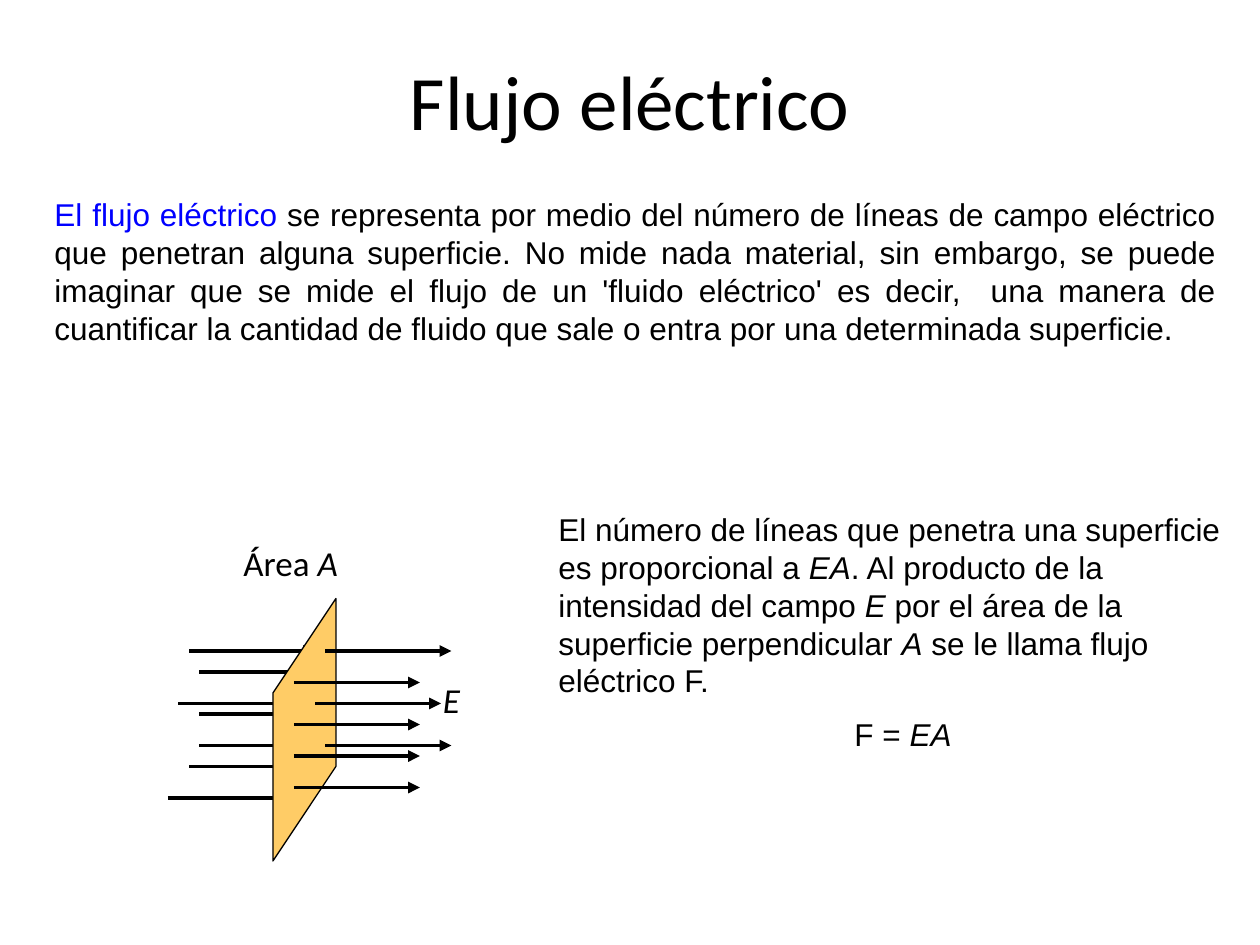
from pptx import Presentation
from pptx.dml.color import RGBColor
from pptx.enum.shapes import MSO_CONNECTOR as Link
from pptx.enum.text import MSO_ANCHOR as Anchor, PP_ALIGN as Align
from pptx.oxml.ns import qn
from pptx.util import Inches, Pt
from lxml.etree import SubElement

COLS, ROWS = 120, 90
SPAN = 12
BACK = [(2, 5), (3, 7), (1, 10), (3, 14), (0, 19), (3, 11), (2, 16)]
FRONT = [(12, 8), (15, 5), (14, 10), (12, 15), (12, 12), (15, 14), (12, 18)]
PLATE = [(10, 25), (10, 9), (16, 0), (16, 16)]


def unit(n):
    """Turn grid columns or rows into a length."""
    return Inches(n / 12)


def tint(hue):
    """Turn a hex string into a colour."""
    return RGBColor.from_string(hue)


def style(item, look):
    """Set each attribute of item named in look."""
    for name, value in look.items():
        setattr(item, name, value)


def place(shape, box):
    """Move a shape to a grid box."""
    names = ("left", "top", "width", "height")
    style(shape, dict(zip(names, map(unit, box))))


def write(par, runs, size, face, align):
    """Fill a paragraph with (text, italic, colour) runs."""
    style(par, {"alignment": align, "space_before": Pt(size / 2)})
    for text, slant, hue in runs:
        run = par.add_run()
        run.text = text
        style(run.font, {"size": Pt(size), "name": face, "italic": slant})
        run.font.color.rgb = tint(hue)


def note(slide, box, pars, size=18, face="Arial"):
    """Add a wrapped text box of (align, runs) paragraphs."""
    frame = slide.shapes.add_textbox(*map(unit, box)).text_frame
    frame.word_wrap = True
    for i, (align, runs) in enumerate(pars):
        par = frame.add_paragraph() if i else frame.paragraphs[0]
        write(par, runs, size, face, align)


def plain(text, hue="000000"):
    """Describe an upright run."""
    return text, False, hue


def slant(text):
    """Describe an italic run."""
    return text, True, "000000"


def head(slide, box):
    """Place and fill the title."""
    title = slide.shapes.title
    place(title, box)
    title.text_frame.vertical_anchor = Anchor.MIDDLE
    par = title.text_frame.paragraphs[0]
    write(par, [plain("Flujo eléctrico")], 44, "Calibri", Align.CENTER)
    par.space_before = Pt(0)


def arrow(group, x, y):
    """Draw one field line pointing right."""
    ends = map(unit, (x, y, x + SPAN, y))
    link = group.shapes.add_connector(Link.STRAIGHT, *ends)
    link.line.width = Pt(2.25)
    link.line.color.rgb = tint("000000")
    SubElement(link.line._get_or_add_ln(), qn("a:tailEnd"), type="triangle")
    SubElement(link._element.spPr, qn("a:effectLst"))


def plate(group, x, y):
    """Draw the slanted surface."""
    start, *rest = [(unit(x + a), unit(y + b)) for a, b in PLATE]
    pen = group.shapes.build_freeform(*start)
    pen.add_line_segments(rest, close=True)
    shape = pen.convert_to_shape()
    shape.shadow.inherit = False
    shape.fill.solid()
    shape.fill.fore_color.rgb = tint("FFCC66")
    shape.line.color.rgb = tint("000000")
    shape.line.width = Pt(0.75)


def field(slide, x, y):
    """Draw the surface with field lines behind and before it."""
    group = slide.shapes.add_group_shape()
    for a, b in BACK:
        arrow(group, x + a, y + b)
    plate(group, x, y)
    for a, b in FRONT:
        arrow(group, x + a, y + b)


def labels(slide, x, y):
    """Name the area and the field."""
    area = [(Align.LEFT, [plain("Área "), slant("A")])]
    note(slide, (x + 6, y - 6, 24, 5.2), area, 20, "Calibri")
    note(slide, (x + 25, y + 7, 6, 5.2), [(Align.LEFT, [slant("E")])], 20, "Calibri")


def intro(slide, box):
    """Write the definition."""
    runs = [
        plain("El flujo eléctrico", "0000FF"),
        plain(" se representa por medio del número de líneas de campo eléctrico "
              "que penetran alguna superficie. No mide nada material, sin embargo, "
              "se puede imaginar que se mide el flujo de un 'fluido eléctrico' es "
              "decir,  una manera de cuantificar la cantidad de fluido que sale o "
              "entra por una determinada superficie."),
    ]
    note(slide, box, [(Align.JUSTIFY, runs)])


def law(slide, box):
    """Write the rule and its formula."""
    rule = [
        plain("El número de líneas que penetra una superficie es proporcional a "),
        slant("EA"),
        plain(". Al producto de la intensidad del campo "),
        slant("E"),
        plain(" por el área de la superficie perpendicular "),
        slant("A"),
        plain(" se le llama flujo eléctrico F."),
    ]
    sum_up = [plain("F = "), slant("EA")]
    note(slide, box, [(Align.LEFT, rule), (Align.CENTER, sum_up)])


def main():
    """Build the slide and save it."""
    deck = Presentation()
    style(deck, {"slide_width": unit(COLS), "slide_height": unit(ROWS)})
    slide = deck.slides.add_slide(deck.slide_layouts[5])
    head(slide, (9, 4, 102, 11))
    intro(slide, (4, 18, 113, 30))
    field(slide, 16, 57)
    law(slide, (52, 48, 68, 37.2))
    labels(slide, 16, 57)
    deck.save("out.pptx")


if __name__ == "__main__":
    main()
